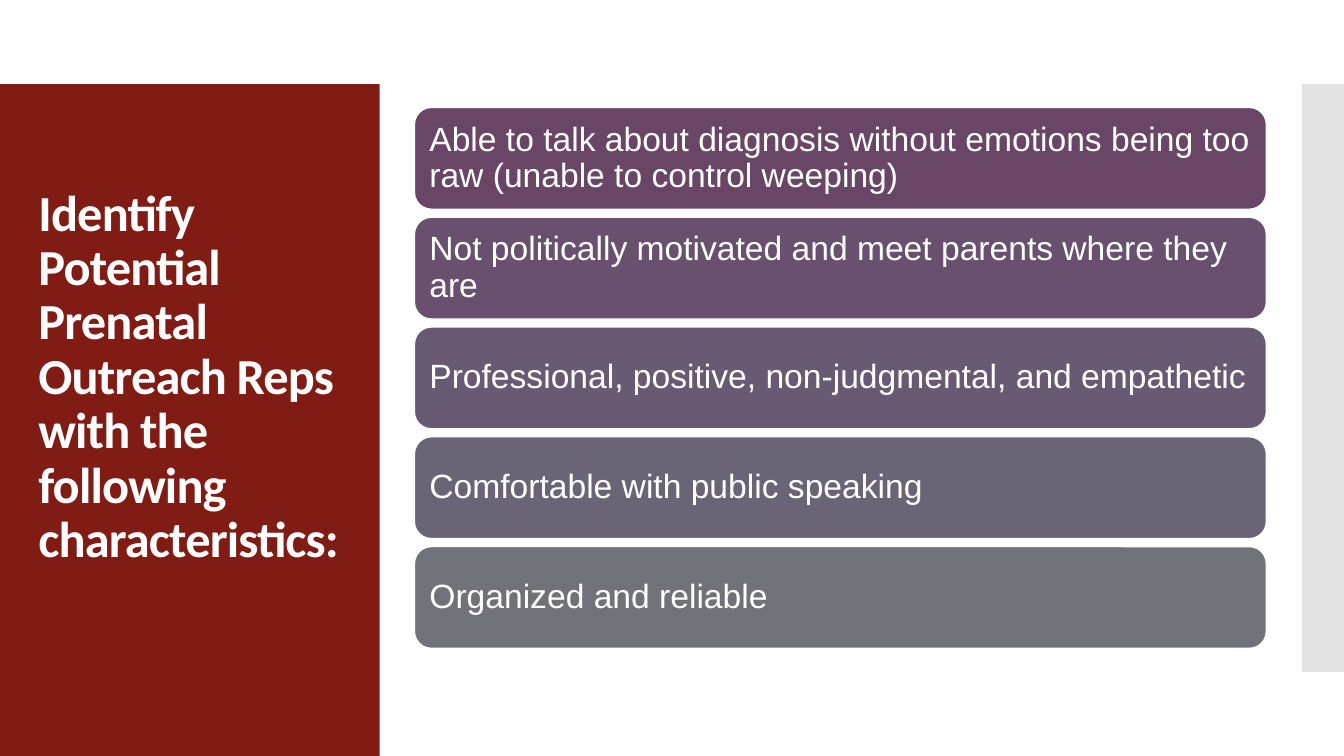
from lxml.etree import SubElement
from pptx import Presentation
from pptx.dml.color import RGBColor
from pptx.enum.shapes import MSO_SHAPE
from pptx.enum.text import MSO_ANCHOR, PP_ALIGN
from pptx.oxml.ns import qn
from pptx.util import Inches, Pt

COLS, ROWS = 160, 90


def color(code):
    return RGBColor.from_string(code)


def write(shape, text, font="Arial", size=24, bold=False, track=0):
    frame = shape.text_frame
    frame.word_wrap = True
    frame.vertical_anchor = MSO_ANCHOR.MIDDLE
    frame.margin_left = frame.margin_right = Inches(0.1)
    frame.margin_top = frame.margin_bottom = Inches(0.05)
    para = frame.paragraphs[0]
    para.alignment = PP_ALIGN.LEFT
    para.line_spacing = 0.9
    run = para.add_run()
    run.text = text
    run.font.name = font
    run.font.size = Pt(size)
    run.font.bold = bold
    run.font.color.rgb = color("FFFFFF")
    if track:
        run._r.get_or_add_rPr().set("spc", str(round(track * 100)))


class Panel:
    def __init__(self, deck):
        self.slide = deck.slides.add_slide(deck.slide_layouts[6])
        self.col = deck.slide_width / COLS
        self.row = deck.slide_height / ROWS

    def place(self, left, top, width, height):
        return (round(left * self.col), round(top * self.row),
                round(width * self.col), round(height * self.row))

    def block(self, *area, fill, kind=MSO_SHAPE.RECTANGLE, alpha=100):
        shape = self.slide.shapes.add_shape(kind, *self.place(*area))
        shape.shadow.inherit = False
        shape.fill.solid()
        shape.fill.fore_color.rgb = color(fill)
        shape.line.fill.background()
        if alpha < 100:
            tint = shape.fill._xPr.find(qn("a:solidFill"))[0]
            SubElement(tint, qn("a:alpha")).set("val", str(alpha * 1000))
        return shape

    def title(self, *area, text):
        box = self.slide.shapes.add_textbox(*self.place(*area))
        write(box, text, font="Calibri", size=36, bold=True, track=-0.6)

    def card(self, *area, text, fill):
        shape = self.block(*area, fill=fill, kind=MSO_SHAPE.ROUNDED_RECTANGLE)
        shape.line.color.rgb = color("FFFFFF")
        shape.line.width = Pt(0.85)
        write(shape, text)


def main():
    deck = Presentation()
    deck.slide_width, deck.slide_height = Inches(13.33), Inches(7.5)
    panel = Panel(deck)
    panel.block(0, 10, 45.2, 80, fill="801C14")
    panel.block(155, 10, 5, 70, fill="C8C8C8", alpha=50)
    panel.title(3.4, 14.8, 38.6, 60.4,
                text="Identify Potential Prenatal Outreach Reps "
                     "with the following characteristics:")
    traits = [
        ("Able to talk about diagnosis without emotions being too raw "
         "(unable to control weeping)", "694665"),
        ("Not politically motivated and meet parents where they are", "69506E"),
        ("Professional, positive, non-judgmental, and empathetic", "685A72"),
        ("Comfortable with public speaking", "6A6576"),
        ("Organized and reliable", "717179"),
    ]
    top, pitch = 12.8, 13.07
    for step, (text, fill) in enumerate(traits):
        panel.card(49.35, top + step * pitch, 101.4, 12.1, text=text, fill=fill)
    deck.save("out.pptx")


if __name__ == "__main__":
    main()
